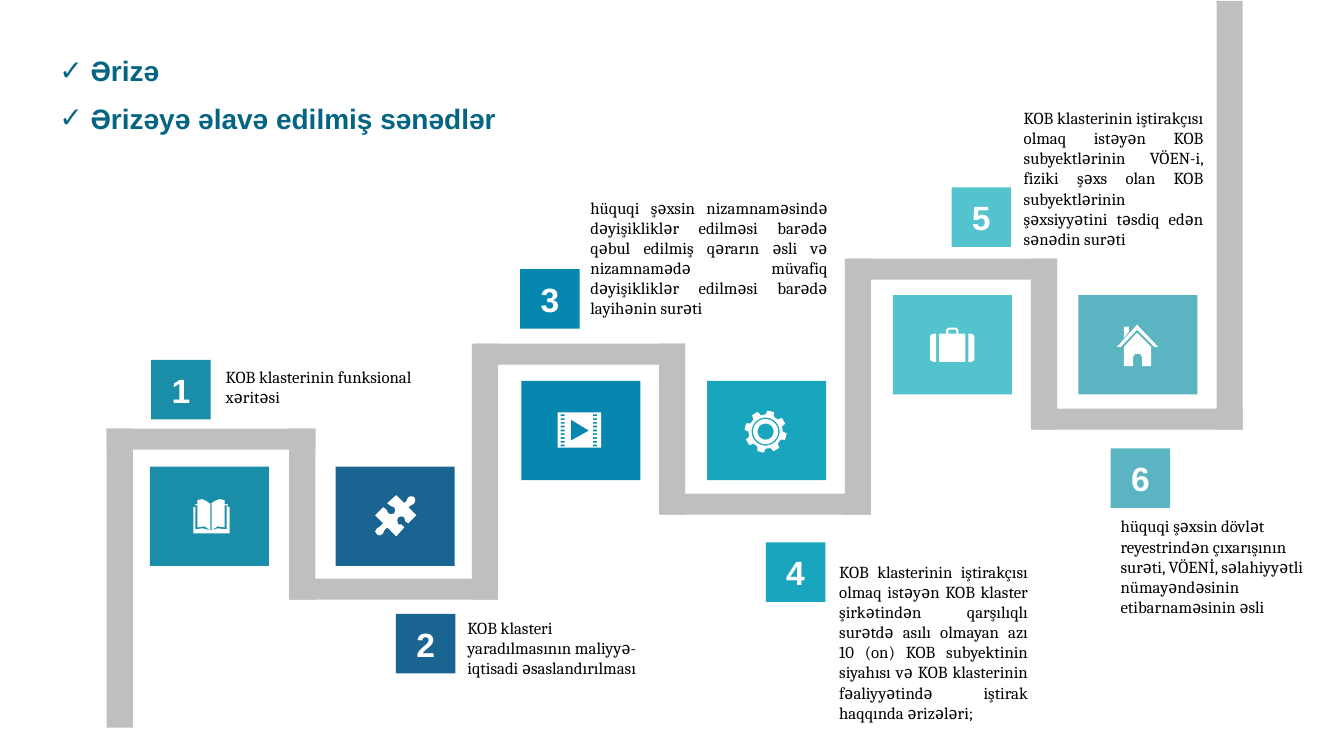
from math import cos, radians, sin

from lxml import etree
from pptx import Presentation
from pptx.dml.color import RGBColor
from pptx.enum.shapes import MSO_SHAPE
from pptx.enum.text import MSO_ANCHOR, MSO_AUTO_SIZE, PP_ALIGN
from pptx.oxml.ns import qn
from pptx.util import Cm, Pt

RECTANGLE = MSO_SHAPE.RECTANGLE
MIDDLE = MSO_ANCHOR.MIDDLE
LEFT, CENTER, JUSTIFY = PP_ALIGN.LEFT, PP_ALIGN.CENTER, PP_ALIGN.JUSTIFY

WHITE = RGBColor(0xFF, 0xFF, 0xFF)
BLACK = RGBColor(0x00, 0x00, 0x00)
PATH_GREY = RGBColor(0xBF, 0xBF, 0xBF)
TITLE_TEAL = RGBColor(0x04, 0x65, 0x83)

TITLE_LINES = ["Ərizə", "Ərizəyə əlavə edilmiş sənədlər"]

# colour, badge (left, top), text box (left, top, width, height), alignment, text
STEPS = [
    (RGBColor(0x1A, 0x8E, 0xA9), (3.81, 9.07), (5.44, 9.12, 5.26, 1.27), LEFT,
     "KOB klasterinin funksional xəritəsi"),
    (RGBColor(0x19, 0x64, 0x91), (9.98, 15.47), (11.53, 15.44, 5.26, 1.8), LEFT,
     "KOB klasteri yaradılmasının maliyyə-iqtisadi əsaslandırılması"),
    (RGBColor(0x05, 0x87, 0xAF), (13.11, 6.78), (14.63, 4.85, 6.48, 3.33), JUSTIFY,
     "hüquqi şəxsin nizamnaməsində dəyişikliklər edilməsi barədə qəbul edilmiş "
     "qərarın əsli və nizamnamədə müvafiq dəyişikliklər edilməsi barədə layihənin surəti"),
    (RGBColor(0x19, 0xA5, 0xBE), (19.3, 13.67), (20.9, 14.02, 5.26, 4.88), JUSTIFY,
     "KOB klasterinin iştirakçısı olmaq istəyən KOB klaster şirkətindən qarşılıqlı "
     "surətdə asılı olmayan azı 10 (on) KOB subyektinin siyahısı və KOB klasterinin "
     "fəaliyyətində iştirak haqqında ərizələri;"),
    (RGBColor(0x53, 0xC3, 0xCD), (23.98, 4.72), (25.55, 2.59, 5.03, 3.84), JUSTIFY,
     "KOB klasterinin iştirakçısı olmaq istəyən KOB subyektlərinin VÖEN-i, fiziki "
     "şəxs olan KOB subyektlərinin şəxsiyyətini təsdiq edən sənədin surəti"),
    (RGBColor(0x5A, 0xB4, 0xC1), (27.99, 11.3), (27.99, 12.88, 5.26, 3.33), LEFT,
     "hüquqi şəxsin dövlət reyestrindən çıxarışının surəti, VÖENİ, səlahiyyətli "
     "nümayəndəsinin etibarnaməsinin əsli"),
]

# Path geometry in cm
COLUMN_LEFTS = [2.69, 7.29, 11.89, 16.61, 21.29, 25.98, 30.66]
COLUMN_WIDTH, BEAM_WIDTH, BEAM_HEIGHT = 0.66, 5.26, 0.53
PATH_START, PATH_END = 17.81, 0.02
STAIR_RISE, PATH_DROP = 2.14, 3.78
CARD_WIDTH, CARD_HEIGHT, CARD_PITCH = 3, 2.5, 4.68
BADGE_SIZE = 1.5

# Icon contours: points around the card centre, 100 units to the inch
ICON_UNIT = Cm(0.0254)
SUBUNITS = 10


def box(left, top, right, bottom):
    return [(left, top), (right, top), (right, bottom), (left, bottom)]


def mirrored(points):
    return [(-x, y) for x, y in points]


def polar(radius, degrees):
    return -1 + radius * cos(radians(degrees)), 1 + radius * sin(radians(degrees))


def circle(radius):
    return [polar(radius, degrees) for degrees in range(0, 360, 15)]


BOOK = [
    [(-16, -9), (-14, -9), (-14, -12), (-12, -12), (-12, -16), (-7, -17), (-3, -15),
     (1, -12), (5, -15), (10, -17), (15, -16), (15, -12), (18, -12), (18, -9),
     (20, -9), (20, 17), (-16, 17)],
    [(-12, -11), (-14, -11), (-14, 13), (-7, 12), (1, 14), (-5, 10), (-12, 11)],
    [(17, -11), (15, -11), (15, 11), (8, 10), (2, 14), (8, 12), (17, 13)],
    box(1, -12, 2, 14),
]
PUZZLE = [
    [(19, -19), (20, -16), (19, -13), (16, -11), (13, -9), (21, -1), (13, 7), (10, 5),
     (9, 1), (6, 0), (3, 1), (2, 4), (3, 8), (6, 8), (9, 11), (1, 20), (-8, 11),
     (-11, 14), (-12, 17), (-15, 19), (-18, 18), (-20, 15), (-18, 12), (-15, 10),
     (-12, 7), (-20, -1), (-12, -9), (-9, -7), (-7, -3), (-4, -2), (-1, -3), (0, -6),
     (-1, -9), (-4, -10), (-8, -13), (1, -21), (9, -13), (11, -15), (13, -19), (16, -20)],
]
FILM = [box(-23, -18, 20, 17), [(-10, -11), (-10, 10), (8, 0)]] + [
    box(left, -16 + 3.75 * row, left + 4, -14.3 + 3.75 * row)
    for left in (-20, 12) for row in range(9)
]
GEAR = [
    [polar(radius, -76 + 45 * tooth + offset) for tooth in range(8)
     for radius, offset in ((17, -14), (21, -9), (21, 9), (17, 14))],
    circle(14), circle(12.5), circle(8),
]
CASE_SIDE = [(-18, -11), (-16, -11), (-16, 17), (-18, 17), (-21, 16), (-22, 14),
             (-22, -8), (-21, -10)]
SUITCASE = [
    CASE_SIDE, mirrored(CASE_SIDE),
    [(-13, 17), (-13, -11), (-6, -11), (-6, -15), (-4, -17), (4, -17), (6, -15),
     (6, -11), (13, -11), (13, 17)],
    [(-4, -11), (-4, -14), (-3, -15), (3, -15), (4, -14), (4, -11)],
]
HOUSE = [
    [(-1, -12), (13, 2), (13, 21), (4, 21), (4, 12), (2, 9), (-3, 9), (-5, 12),
     (-5, 21), (-14, 21), (-14, 2)],
    [(-14, -18), (-9, -18), (-9, -13), (-14, -7)],
    [(-1, -20), (20, 2), (16, 2), (-1, -15), (-17, 2), (-21, 2)],
]
ICONS = [BOOK, PUZZLE, FILM, GEAR, SUITCASE, HOUSE]


def paint(shape, color):
    shape.shadow.inherit = False
    shape.fill.solid()
    shape.fill.fore_color.rgb = color
    shape.line.fill.background()


def add_block(shapes, left, top, width, height, color):
    block = shapes.add_shape(RECTANGLE, Cm(left), Cm(top), Cm(width), Cm(height))
    paint(block, color)
    return block


def style(paragraph, font_name, size, color, alignment, bold=False):
    font = paragraph.font
    font.name, font.size, font.bold = font_name, Pt(size), bold
    font.color.rgb = color
    paragraph.alignment = alignment


def add_icon(shapes, contours, center_x, center_y):
    builder = None
    for contour in contours:
        points = [(round(x * SUBUNITS), round(y * SUBUNITS)) for x, y in contour]
        if builder is None:
            builder = shapes.build_freeform(*points[0], scale=ICON_UNIT / SUBUNITS)
        else:
            builder.move_to(*points[0])
        builder.add_line_segments(points[1:], close=True)
    paint(builder.convert_to_shape(Cm(center_x), Cm(center_y)), WHITE)


presentation = Presentation()
presentation.slide_width, presentation.slide_height = Cm(33.87), Cm(19.05)
slide = presentation.slides.add_slide(presentation.slide_layouts[5])

title = slide.shapes.title
title.left, title.top, title.width, title.height = Cm(1.24), Cm(1.37), Cm(24.43), Cm(2.01)
title.text_frame.text = "\n".join(TITLE_LINES)
title.text_frame.auto_size = MSO_AUTO_SIZE.NONE
title.text_frame.vertical_anchor = MIDDLE
for paragraph in title.text_frame.paragraphs:
    style(paragraph, "Arial", 20, TITLE_TEAL, LEFT, bold=True)
    paragraph.space_before = Pt(10)
    paragraph.line_spacing = 1.0
    properties = paragraph._p.get_or_add_pPr()
    properties.set("marL", str(Cm(0.79)))
    properties.set("indent", str(Cm(-0.79)))
    etree.SubElement(properties, qn("a:buFont")).set("typeface", "Arial")
    etree.SubElement(properties, qn("a:buChar")).set("char", "✓")

path_shapes = slide.shapes.add_group_shape().shapes
beam_tops = [10.8 - STAIR_RISE * (index // 2) + PATH_DROP * (index % 2)
             for index in range(len(STEPS))]
levels = [PATH_START, *beam_tops, PATH_END]
for left, start, end in zip(COLUMN_LEFTS, levels, levels[1:]):
    add_block(path_shapes, left, min(start, end), COLUMN_WIDTH,
              abs(end - start) + BEAM_HEIGHT, PATH_GREY)
for next_left, top in zip(COLUMN_LEFTS[1:], beam_tops):
    add_block(path_shapes, next_left + COLUMN_WIDTH - BEAM_WIDTH, top,
              BEAM_WIDTH, BEAM_HEIGHT, PATH_GREY)

for index, (color, badge_place, text_place, alignment, text) in enumerate(STEPS):
    card_left = 3.78 + CARD_PITCH * index
    card_top = 11.76 - 2.16 * (index // 2)
    add_block(slide.shapes, card_left, card_top, CARD_WIDTH, CARD_HEIGHT, color)
    add_icon(slide.shapes, ICONS[index], card_left + CARD_WIDTH / 2, card_top + CARD_HEIGHT / 2)

    badge = add_block(slide.shapes, *badge_place, BADGE_SIZE, BADGE_SIZE, color)
    badge.text_frame.text = str(index + 1)
    badge.text_frame.vertical_anchor = MIDDLE
    style(badge.text_frame.paragraphs[0], "Arial", 24, WHITE, CENTER, bold=True)

    description = slide.shapes.add_textbox(*(Cm(value) for value in text_place))
    description.text_frame.word_wrap = True
    description.text_frame.text = text
    style(description.text_frame.paragraphs[0], "Cambria", 12, BLACK, alignment)

presentation.save("out.pptx")
